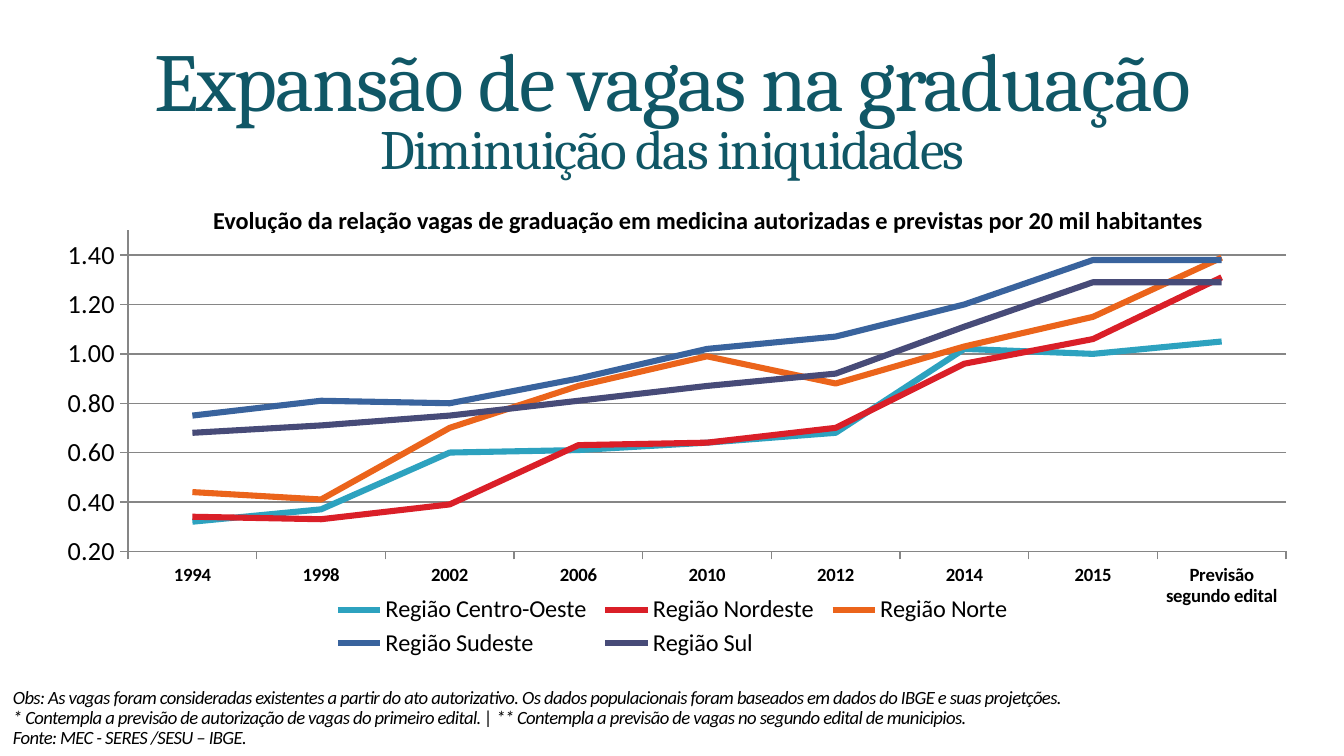
from lxml import etree
from pptx import Presentation
from pptx.chart.data import CategoryChartData
from pptx.dml.color import RGBColor
from pptx.enum.chart import XL_CHART_TYPE as ChartType, XL_LEGEND_POSITION as LegendPos, XL_TICK_MARK as Tick
from pptx.enum.text import MSO_ANCHOR as Anchor, PP_ALIGN as Align
from pptx.oxml.ns import qn
from pptx.util import Pt

PX = 914400 / 134.4
COLORS = {"title": "105766", "text": "000000", "grid": "868686"}


def add_text(box, lines, sizes, font, color, align, spacing=1.0, tracking=0, inset=(13, 7), bold=False, italic=False):
    frame = slide.shapes.add_textbox(*[round(v * PX) for v in box]).text_frame
    frame.word_wrap = True
    frame.vertical_anchor = Anchor.MIDDLE
    frame.margin_left = frame.margin_right = round(inset[0] * PX)
    frame.margin_top = frame.margin_bottom = round(inset[1] * PX)
    frame.text = lines
    for paragraph in frame.paragraphs:
        paragraph.alignment = align
        paragraph.line_spacing = spacing
        for run, size in zip(paragraph.runs, sizes):
            run.font.size = Pt(size)
            run.font.name = font
            run.font.bold = bold
            run.font.italic = italic
            run.font.color.rgb = RGBColor.from_string(COLORS[color])
            run.font._element.set("spc", str(tracking))


def place(parent, x, y, w, h, inner=False):
    for old in parent.findall(qn("c:layout")):
        parent.remove(old)
    layout = etree.Element(qn("c:layout"))
    manual = etree.SubElement(layout, qn("c:manualLayout"))
    target = [("layoutTarget", "inner")] if inner else []
    modes = [("xMode", "edge"), ("yMode", "edge")]
    for tag, value in target + modes + [("x", x), ("y", y), ("w", w), ("h", h)]:
        etree.SubElement(manual, qn("c:" + tag)).set("val", str(value))
    position = parent.find(qn("c:legendPos"))
    parent.insert(0 if position is None else 1, layout)


prs = Presentation()
prs.slide_width, prs.slide_height = round(1344 * PX), round(756 * PX)
slide = prs.slides.add_slide(prs.slide_layouts[6])

add_text((27, 51, 1291, 126), "Expansão de vagas na graduação\vDiminuição das iniquidades",
         (44.1, 29.7), "Cambria", "title", Align.CENTER, 0.8, -100, (5, 5))

add_text((0, 681, 1344, 75),
         "Obs: As vagas foram consideradas existentes a partir do ato autorizativo. "
         "Os dados populacionais foram baseados em dados do IBGE e suas projetções.\n"
         "* Contempla a previsão de autorização de vagas do primeiro edital. | "
         "** Contempla a previsão de vagas no segundo edital de municipios.\n"
         "Fonte: MEC - SERES /SESU – IBGE.",
         (10,), "Calibri", "text", Align.LEFT, 0.9, -30, italic=True)

regions = [
    ("Região Centro-Oeste", "2DA2BF", (0.32, 0.37, 0.6, 0.61, 0.64, 0.68, 1.02, 1, 1.05)),
    ("Região Nordeste", "DA1F28", (0.34, 0.33, 0.39, 0.63, 0.64, 0.7, 0.96, 1.06, 1.31)),
    ("Região Norte", "EB641B", (0.44, 0.41, 0.7, 0.87, 0.99, 0.88, 1.03, 1.15, 1.39)),
    ("Região Sudeste", "39639D", (0.75, 0.81, 0.8, 0.9, 1.02, 1.07, 1.2, 1.38, 1.38)),
    ("Região Sul", "474B78", (0.68, 0.71, 0.75, 0.81, 0.87, 0.92, 1.11, 1.29, 1.29)),
]
data = CategoryChartData(number_format="0.00")
data.categories = ["1994", "1998", "2002", "2006", "2010", "2012", "2014", "2015", "Previsão segundo edital"]
for region, _, ratios in regions:
    data.add_series(region, ratios)

chart_box = [round(v * PX) for v in (32, 167, 1281, 500)]
chart = slide.shapes.add_chart(ChartType.LINE, *chart_box, data).chart
chart.has_title = False
chart.font.name = "Calibri"
chart.font.size = Pt(14)
chart.font.color.rgb = RGBColor.from_string(COLORS["text"])
plot = chart.plots[0]
plot.vary_by_categories = False
for series, (_, color, _) in zip(plot.series, regions):
    series.smooth = False
    series.format.line.width = Pt(3.25)
    series.format.line.color.rgb = RGBColor.from_string(color)

years, ratio_axis = chart.category_axis, chart.value_axis
years.tick_labels.font.size = Pt(10)
years.tick_labels.font.bold = True
ratio_axis.minimum_scale, ratio_axis.maximum_scale = 0.2, 1.5
ratio_axis.major_unit = 0.2
ratio_axis.tick_labels.number_format = "0.00"
ratio_axis.tick_labels.number_format_is_linked = False
ratio_axis.has_major_gridlines = True
for axis in (years, ratio_axis):
    axis.major_tick_mark = Tick.OUTSIDE
for lines in (years, ratio_axis, ratio_axis.major_gridlines):
    lines.format.line.width = Pt(0.75)
    lines.format.line.color.rgb = RGBColor.from_string(COLORS["grid"])

chart.has_legend = True
chart.legend.position = LegendPos.BOTTOM
chart.legend.include_in_layout = False
chart.legend.font.size = Pt(13)
place(chart.legend._element, 0.23, 0.85, 0.54, 0.14)
place(chart._chartSpace.chart.plotArea, 0.075, 0.127, 0.904, 0.642, inner=True)

add_text((128, 198, 1159, 43),
         "Evolução da relação vagas de graduação em medicina autorizadas e previstas por 20 mil habitantes",
         (13,), "Calibri", "text", Align.CENTER, bold=True)

prs.save("out.pptx")
